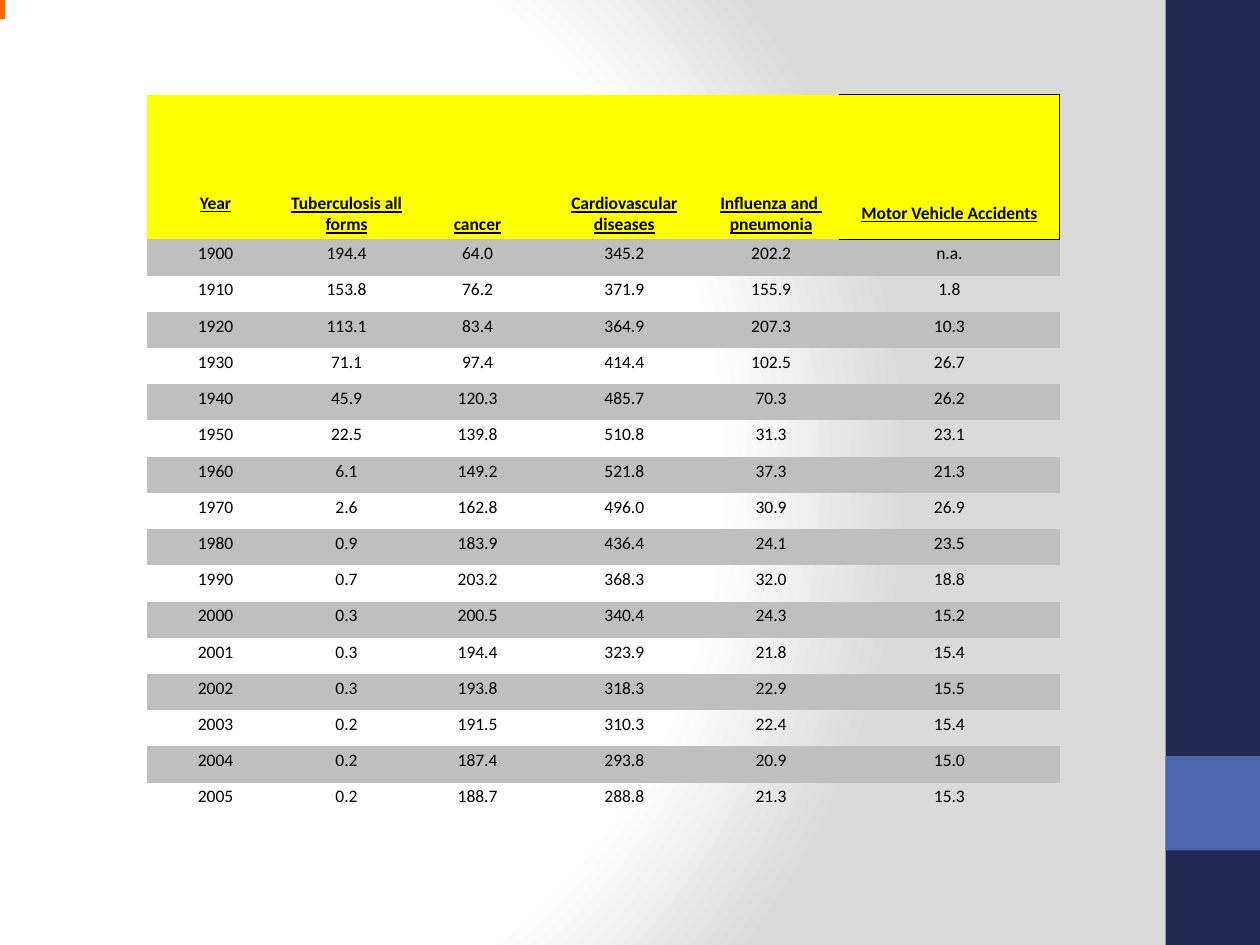
from lxml.etree import SubElement
from pptx import Presentation
from pptx.dml.color import RGBColor
from pptx.enum.shapes import MSO_SHAPE
from pptx.enum.text import MSO_ANCHOR, PP_ALIGN
from pptx.oxml import parse_xml
from pptx.oxml.ns import nsdecls, qn
from pptx.util import Inches, Pt

COLORS = {
    "navy": "242852", "blue": "4A66AC", "orange": "FF6600",
    "header": "FFFF00", "band": "BFBFBF", "text": "000000",
    "light": "FFFFFF", "shade": "DADADA",
}
NO_STYLE = "{2D5ABB26-0587-4C30-8999-92F81FD0307C}"
HEADERS = ["Year", "Tuberculosis all forms", "cancer", "Cardiovascular\ndiseases",
           "Influenza and \npneumonia", "Motor Vehicle Accidents"]
COL_WIDTHS = [1.08, 1, 1.08, 1.25, 1.08, 1.75]
HEADER_HEIGHT, TABLE_HEIGHT = 1.15, 5.75
# Space under header texts that sit above the common bottom line
HEADER_BOTTOMS = {"Year": 0.2, "Motor Vehicle Accidents": 0.12}
DEATH_RATES = [
    ["1900", "194.4", "64.0", "345.2", "202.2", "n.a."],
    ["1910", "153.8", "76.2", "371.9", "155.9", "1.8"],
    ["1920", "113.1", "83.4", "364.9", "207.3", "10.3"],
    ["1930", "71.1", "97.4", "414.4", "102.5", "26.7"],
    ["1940", "45.9", "120.3", "485.7", "70.3", "26.2"],
    ["1950", "22.5", "139.8", "510.8", "31.3", "23.1"],
    ["1960", "6.1", "149.2", "521.8", "37.3", "21.3"],
    ["1970", "2.6", "162.8", "496.0", "30.9", "26.9"],
    ["1980", "0.9", "183.9", "436.4", "24.1", "23.5"],
    ["1990", "0.7", "203.2", "368.3", "32.0", "18.8"],
    ["2000", "0.3", "200.5", "340.4", "24.3", "15.2"],
    ["2001", "0.3", "194.4", "323.9", "21.8", "15.4"],
    ["2002", "0.3", "193.8", "318.3", "22.9", "15.5"],
    ["2003", "0.2", "191.5", "310.3", "22.4", "15.4"],
    ["2004", "0.2", "187.4", "293.8", "20.9", "15.0"],
    ["2005", "0.2", "188.7", "288.8", "21.3", "15.3"],
]


class SlideBuilder:
    """Holds the text style and the slide being filled."""

    def __init__(self, slide, font="Calibri", size=10):
        self.slide, self.font, self.size = slide, font, size

    def background(self):
        """Radial gradient centred left of the middle."""
        stops = [(0, "light"), (75, "light"), (100, "shade")]
        gs = "".join(f'<a:gs pos="{pos * 1000}"><a:srgbClr val="{COLORS[c]}"/></a:gs>'
                     for pos, c in stops)
        bg = parse_xml(
            f'<p:bg {nsdecls("p", "a")}><p:bgPr><a:gradFill rotWithShape="1">'
            f'<a:gsLst>{gs}</a:gsLst><a:path path="circle">'
            '<a:fillToRect l="20000" t="50000" r="100000" b="50000"/></a:path>'
            '</a:gradFill><a:effectLst/></p:bgPr></p:bg>')
        self.slide.element.cSld.insert(0, bg)

    def rect(self, color, *box):
        sp = self.slide.shapes.add_shape(MSO_SHAPE.RECTANGLE, *map(Inches, box))
        sp.shadow.inherit = False
        sp.fill.solid()
        sp.fill.fore_color.rgb = RGBColor.from_string(COLORS[color])
        sp.line.fill.background()

    def cell(self, cell, text, fill=None, header=False):
        cell.margin_left = cell.margin_right = Inches(0.06)
        cell.margin_top = Inches(0.03)
        cell.margin_bottom = Inches(HEADER_BOTTOMS.get(text, 0.03))
        cell.vertical_anchor = MSO_ANCHOR.BOTTOM if header else MSO_ANCHOR.TOP
        if fill:
            cell.fill.solid()
            cell.fill.fore_color.rgb = RGBColor.from_string(COLORS[fill])
        else:
            cell.fill.background()
        cell.text_frame.text = text
        for p in cell.text_frame.paragraphs:
            p.alignment = PP_ALIGN.CENTER
            for r in p.runs:
                r.font.name, r.font.size = self.font, Pt(self.size)
                r.font.bold = r.font.underline = header
                r.font.color.rgb = RGBColor.from_string(COLORS["text"])

    def borders(self, cell, sides):
        tcPr = cell._tc.get_or_add_tcPr()
        for i, side in enumerate(sides):
            ln = SubElement(tcPr, qn(f"a:ln{side}"), w=str(Pt(0.75)))
            fill = SubElement(ln, qn("a:solidFill"))
            SubElement(fill, qn("a:srgbClr"), val=COLORS["text"])
            tcPr.insert(i, ln)

    def table(self, left, top):
        rows, cols = len(DEATH_RATES) + 1, len(HEADERS)
        frame = self.slide.shapes.add_table(
            rows, cols, Inches(left), Inches(top),
            Inches(sum(COL_WIDTHS)), Inches(TABLE_HEIGHT))
        table = frame.table
        table.first_row = table.horz_banding = False
        table._tbl.tblPr.find(qn("a:tableStyleId")).text = NO_STYLE
        for column, width in zip(table.columns, COL_WIDTHS):
            column.width = Inches(width)
        for row in table.rows:
            row.height = Inches((TABLE_HEIGHT - HEADER_HEIGHT) / len(DEATH_RATES))
        table.rows[0].height = Inches(HEADER_HEIGHT)
        for c, text in enumerate(HEADERS):
            self.cell(table.cell(0, c), text, "header", header=True)
        for r, values in enumerate(DEATH_RATES, 1):
            for c, text in enumerate(values):
                self.cell(table.cell(r, c), text, "band" if r % 2 else None)
        self.borders(table.cell(0, cols - 1), "RTB")


def main():
    prs = Presentation()
    prs.slide_width, prs.slide_height = Inches(10), Inches(7.5)
    builder = SlideBuilder(prs.slides.add_slide(prs.slide_layouts[6]))
    builder.background()
    builder.rect("navy", 9.25, 0, 0.75, 7.5)
    builder.rect("blue", 9.25, 6, 0.75, 0.75)
    builder.table(1.17, 0.75)
    builder.rect("orange", 0, 0, 0.04, 0.15)
    prs.save("out.pptx")


if __name__ == "__main__":
    main()
